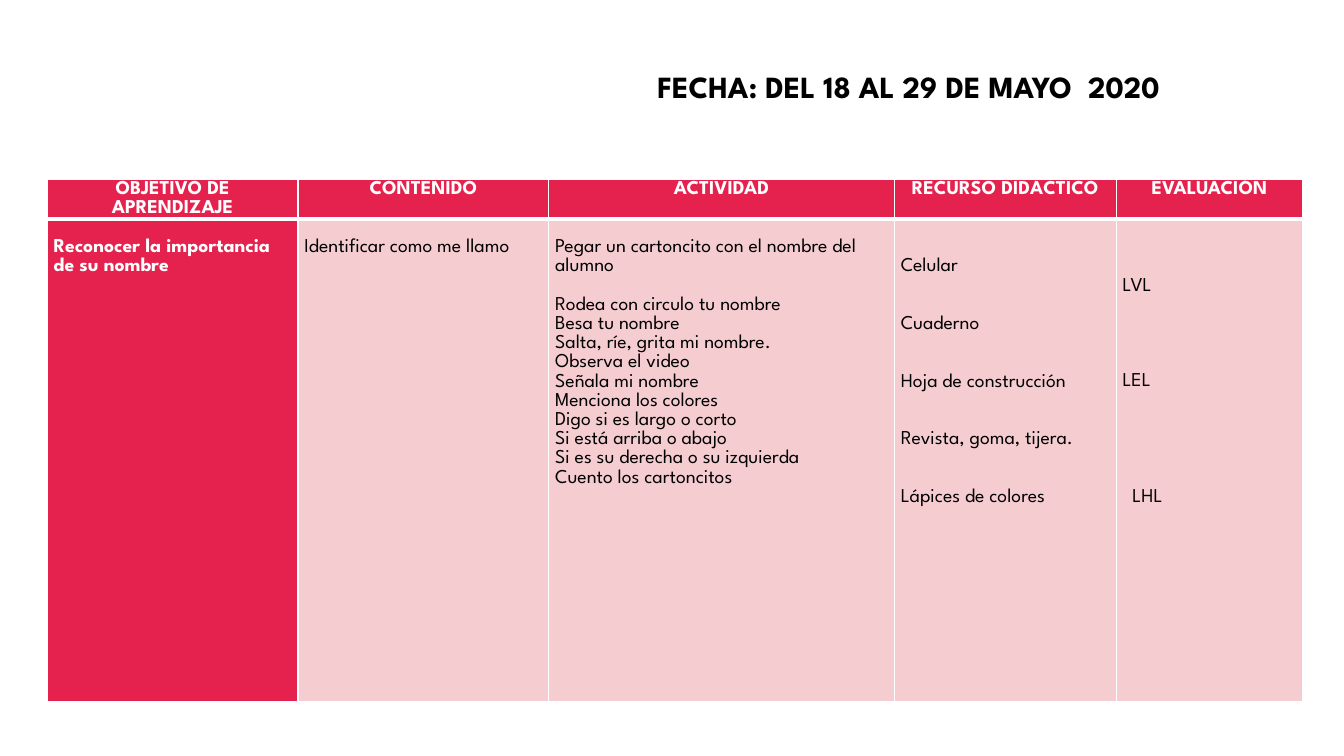
"""Build a weekly lesson plan slide with a heading and a five-column table."""
import pptx
import pptx.dml.color
import pptx.enum.text
import pptx.oxml.ns
import pptx.util
from lxml import etree

Cm = pptx.util.Cm
Pt = pptx.util.Pt
ALIGN = pptx.enum.text.PP_ALIGN
ANCHOR = pptx.enum.text.MSO_ANCHOR
RED, PINK, WHITE, BLACK = "E5224E", "F5CDD0", "FFFFFF", "000000"
LINE = 13.7
HEADS = ["OBJETIVO DE APRENDIZAJE", "CONTENIDO", "ACTIVIDAD",
         "RECURSO DIDÁCTICO", "EVALUACIÓN"]
WIDTHS = [6.32, 6.32, 8.71, 5.59, 4.7]
BODY = [
    [(1, "Reconocer la importancia de su nombre")],
    [(1, "Identificar como me llamo")],
    [(1, "Pegar un cartoncito con el nombre del alumno"),
     (1, "Rodea con circulo tu nombre"),
     (0, "Besa tu nombre"),
     (0, "Salta, ríe, grita mi nombre."),
     (0, "Observa el video"),
     (0, "Señala mi nombre"),
     (0, "Menciona los colores"),
     (0, "Digo si es largo o corto"),
     (0, "Si está arriba o abajo"),
     (0, "Si es su derecha o su izquierda"),
     (0, "Cuento los cartoncitos")],
    [(2, "Celular"), (2, "Cuaderno"), (2, "Hoja de construcción"),
     (2, "Revista, goma, tijera."), (2, "Lápices de colores")],
    [(3, "LVL"), (4, "LEL"), (5, "LHL")],
]
INDENTS = {"LHL": 0.25}


def color(code):
    return pptx.dml.color.RGBColor.from_string(code)


class Plan:
    def __init__(self, slide, face):
        self.slide = slide
        self.face = face

    def text(self, para, words, size, tint, bold):
        run = para.add_run()
        run.text = words
        font = run.font
        font.name, font.size, font.bold = self.face, Pt(size), bold
        font.color.rgb = color(tint)

    def title(self, words, left, top, width, height):
        box = self.slide.shapes.title
        box.left, box.top = Cm(left), Cm(top)
        box.width, box.height = Cm(width), Cm(height)
        frame = box.text_frame
        frame.word_wrap = True
        frame.auto_size = pptx.enum.text.MSO_AUTO_SIZE.NONE
        frame.vertical_anchor = ANCHOR.TOP
        para = frame.paragraphs[0]
        para.alignment, para.line_spacing = ALIGN.CENTER, 0.9
        self.text(para, words, 22, BLACK, True)

    def border(self, cell, sides):
        props = cell._tc.get_or_add_tcPr()
        for side, width in sides.items():
            line = etree.SubElement(props, pptx.oxml.ns.qn("a:ln" + side),
                                    w=str(Pt(width)))
            fill = etree.SubElement(line, pptx.oxml.ns.qn("a:solidFill"))
            etree.SubElement(fill, pptx.oxml.ns.qn("a:srgbClr"), val=WHITE)

    def cell(self, cell, items, back, tint, bold, align, sides):
        self.border(cell, sides)
        cell.fill.solid()
        cell.fill.fore_color.rgb = color(back)
        cell.margin_left = cell.margin_right = Cm(0.16)
        cell.margin_top, cell.margin_bottom = Pt(items[0][0] * LINE), 0
        cell.vertical_anchor = ANCHOR.TOP
        frame = cell.text_frame
        for i, (gap, words) in enumerate(items):
            para = frame.add_paragraph() if i else frame.paragraphs[0]
            para.alignment, para.line_spacing = align, 1.06
            if i and gap:
                para.space_before = Pt(gap * LINE)
            if words in INDENTS:
                para._p.get_or_add_pPr().set("marL", str(Cm(INDENTS[words])))
            self.text(para, words, 14, tint, bold)

    def table(self, left, top, widths, heights):
        frame = self.slide.shapes.add_table(
            len(heights), len(widths), Cm(left), Cm(top),
            Cm(sum(widths)), Cm(sum(heights)))
        grid = frame.table
        for col, width in zip(grid.columns, widths):
            col.width = Cm(width)
        for row, height in zip(grid.rows, heights):
            row.height = Cm(height)
        for i, (head, items) in enumerate(zip(HEADS, BODY)):
            self.cell(grid.cell(0, i), [(0, head)], RED, WHITE, True,
                      ALIGN.CENTER, {"L": 1, "R": 1, "T": 1, "B": 3})
            back, tint = (PINK, BLACK) if i else (RED, WHITE)
            self.cell(grid.cell(1, i), items, back, tint, i == 0,
                      ALIGN.LEFT, {"L": 1, "R": 1, "T": 3, "B": 1})


def main():
    deck = pptx.Presentation()
    deck.slide_width, deck.slide_height = Cm(33.87), Cm(19.05)
    plan = Plan(deck.slides.add_slide(deck.slide_layouts[5]), "League Spartan")
    plan.title("FECHA: DEL 18 AL 29 DE MAYO  2020 ", 9.88, 1.68, 26.24, 1.9)
    plan.table(1.19, 4.52, WIDTHS, [0.99, 12.17])
    deck.save("out.pptx")


if __name__ == "__main__":
    main()
